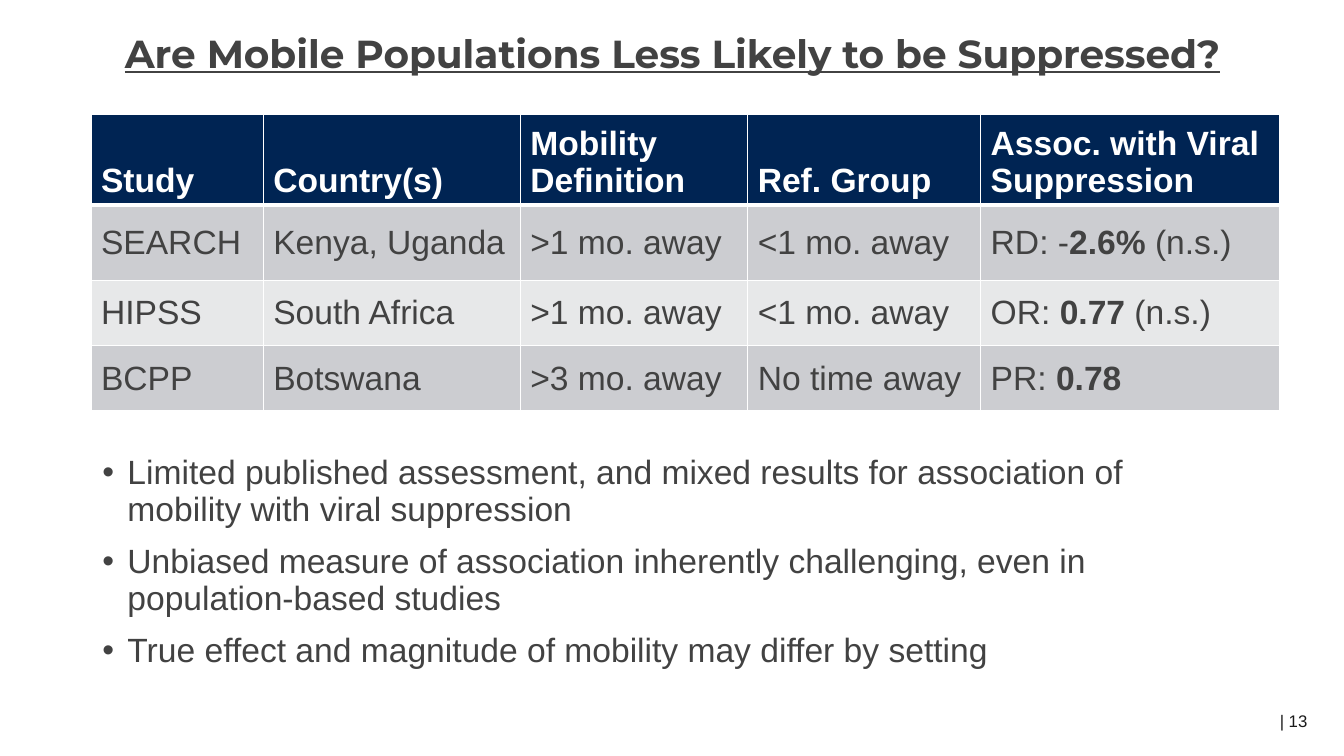
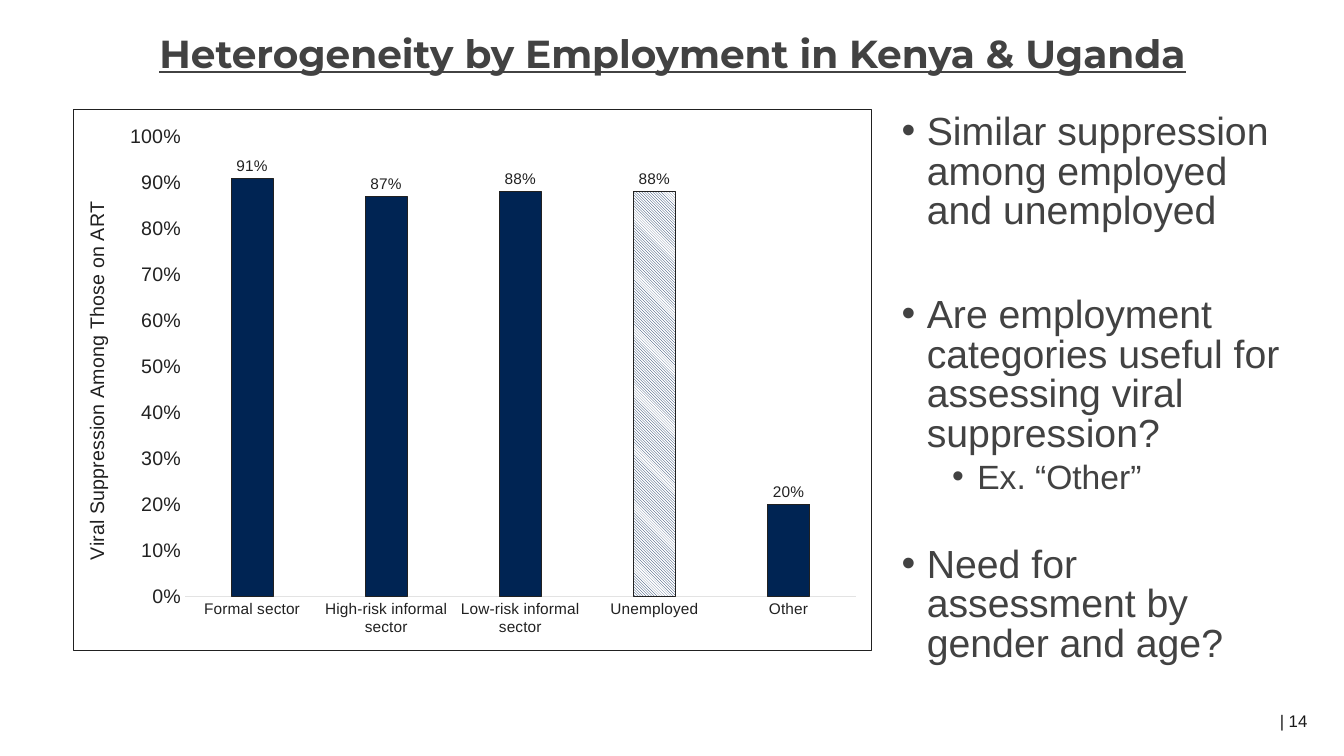
"""Build two slides on mobility, employment and viral suppression."""
from dataclasses import dataclass

import lxml.etree
import pptx
import pptx.chart.chart
import pptx.chart.data
import pptx.dml.color
import pptx.enum.chart
import pptx.enum.dml
import pptx.enum.text
import pptx.oxml
import pptx.oxml.ns
import pptx.presentation
import pptx.slide
import pptx.table
import pptx.text.text
import pptx.util

Pt = pptx.util.Pt
Align = pptx.enum.text.PP_ALIGN
Anchor = pptx.enum.text.MSO_ANCHOR
qn = pptx.oxml.ns.qn

COLOURS = {
    "text": "424242",
    "ink": "212121",
    "footer": "1A1A1A",
    "navy": "002453",
    "white": "FFFFFF",
    "band": "CCCDD1",
    "light_band": "E7E8E9",
    "axis": "E3E3E3",
}
BODY_FONT = "Arial"
TITLE_FONT = "Montserrat"


@dataclass(frozen=True)
class Frame:
    left: float
    top: float
    width: float
    height: float

    def lengths(self) -> list[pptx.util.Length]:
        return [Pt(side) for side in (self.left, self.top, self.width, self.height)]


@dataclass(frozen=True)
class Bullet:
    text: str
    size: float
    before: float = 0
    level: int = 0


TITLE_FRAME = Frame(52, 26.6, 857, 51)
NUMBER_FRAME = Frame(725, 500.4, 216, 28.8)
TABLE_FRAME = Frame(65, 81.4, 849, 208.4)
CHART_FRAME = Frame(52, 78, 571, 387)
FINDINGS_FRAME = Frame(66, 321, 828, 170)
QUESTIONS_FRAME = Frame(637, 78, 290, 422)

COLUMN_WIDTHS = (123, 183.6, 162.5, 166.4, 213.5)
ROW_HEIGHTS = (61, 54, 46.7, 46.7)
STUDIES = (
    ("Study", "Country(s)", "Mobility Definition", "Ref. Group", "Assoc. with Viral Suppression"),
    ("SEARCH", "Kenya, Uganda", ">1 mo. away", "<1 mo. away", "RD: -**2.6%** (n.s.)"),
    ("HIPSS", "South Africa", ">1 mo. away", "<1 mo. away", "OR: **0.77** (n.s.)"),
    ("BCPP", "Botswana", ">3 mo. away", "No time away", "PR: **0.78**"),
)
FINDINGS = (
    Bullet("Limited published assessment, and mixed results for association of "
           "mobility with viral suppression", 24),
    Bullet("Unbiased measure of association inherently challenging, even in "
           "population-based studies", 24, 10),
    Bullet("True effect and magnitude of mobility may differ by setting", 24, 10),
)
QUESTIONS = (
    Bullet("Similar suppression among employed and unemployed", 28),
    Bullet("Are employment categories useful for assessing viral suppression?", 28, 46),
    Bullet("Ex. “Other”", 24, 5, 1),
    Bullet("Need for assessment by gender and age?", 28, 36),
)
SUPPRESSION = {
    "Formal sector": 0.91,
    "High-risk informal sector": 0.87,
    "Low-risk informal sector": 0.88,
    "Unemployed": 0.88,
    "Other": 0.2,
}
UNEMPLOYED_INDEX = 3
PLOT_LAYOUT = {"x": 0.14, "y": 0.05, "w": 0.84, "h": 0.85}


def colour(name: str) -> pptx.dml.color.RGBColor:
    return pptx.dml.color.RGBColor.from_string(COLOURS[name])


def style_font(font: pptx.text.text.Font, size: float, tint: str, *, name: str = BODY_FONT,
               bold: bool = False, underline: bool = False) -> None:
    font.name, font.size, font.bold, font.underline = name, Pt(size), bold, underline
    font.color.rgb = colour(tint)


def write_text(frame: pptx.text.text.TextFrame, text: str, *, size: float, tint: str = "text",
               name: str = BODY_FONT, bold: bool = False, underline: bool = False,
               align: Align = Align.LEFT, spacing: float = 1.0, before: float = 0,
               bullet_level: int | None = None) -> None:
    para = frame.paragraphs[0]
    if para.runs:
        para = frame.add_paragraph()
    if bullet_level is not None:
        properties = para._p.get_or_add_pPr()
        properties.set("marL", str(Pt(18 + 36 * bullet_level)))
        properties.set("indent", str(-Pt(18)))
        lxml.etree.SubElement(properties, qn("a:buFont")).set("typeface", BODY_FONT)
        lxml.etree.SubElement(properties, qn("a:buChar")).set("char", "•")
        para.level = bullet_level
    para.alignment, para.line_spacing, para.space_before = align, spacing, Pt(before)
    for index, part in enumerate(text.split("**")):
        if part:
            span = para.add_run()
            span.text = part
            style_font(span.font, size, tint, name=name, bold=bold or index % 2 == 1,
                       underline=underline)


def add_box(page: pptx.slide.Slide, place: Frame,
            anchor: Anchor = Anchor.TOP) -> pptx.text.text.TextFrame:
    frame = page.shapes.add_textbox(*place.lengths()).text_frame
    frame.word_wrap = True
    frame.vertical_anchor = anchor
    return frame


def add_page(deck: pptx.presentation.Presentation, title: str, number: int) -> pptx.slide.Slide:
    page = deck.slides.add_slide(deck.slide_layouts[5])
    heading = page.shapes.title
    heading.left, heading.top, heading.width, heading.height = TITLE_FRAME.lengths()
    heading.text_frame.vertical_anchor = Anchor.TOP
    heading.text_frame.auto_size = pptx.enum.text.MSO_AUTO_SIZE.NONE
    write_text(heading.text_frame, title, size=27.9, name=TITLE_FONT, bold=True,
               underline=True, align=Align.CENTER, spacing=0.7)
    write_text(add_box(page, NUMBER_FRAME, Anchor.MIDDLE), f"| {number}", size=12,
               tint="footer", align=Align.RIGHT)
    return page


def add_bullets(page: pptx.slide.Slide, place: Frame, bullets: tuple[Bullet, ...],
                spacing: float) -> None:
    frame = add_box(page, place)
    for bullet in bullets:
        write_text(frame, bullet.text, size=bullet.size, before=bullet.before,
                   spacing=spacing, bullet_level=bullet.level)


def set_borders(cell: pptx.table._Cell, bottom: float) -> None:
    properties = cell._tc.get_or_add_tcPr()
    widths = {"lnL": 1, "lnR": 1, "lnT": 1, "lnB": bottom}
    for index, (side, width) in enumerate(widths.items()):
        line = lxml.etree.Element(qn(f"a:{side}"), w=str(Pt(width)))
        fill = lxml.etree.SubElement(line, qn("a:solidFill"))
        lxml.etree.SubElement(fill, qn("a:srgbClr")).set("val", COLOURS["white"])
        properties.insert(index, line)


def add_study_table(page: pptx.slide.Slide) -> None:
    table = page.shapes.add_table(len(STUDIES), len(COLUMN_WIDTHS),
                                  *TABLE_FRAME.lengths()).table
    for column, width in zip(table.columns, COLUMN_WIDTHS):
        column.width = Pt(width)
    for index, (row, height, texts) in enumerate(zip(table.rows, ROW_HEIGHTS, STUDIES)):
        header = index == 0
        row.height = Pt(height)
        band = "navy" if header else "band" if index % 2 else "light_band"
        for cell, text in zip(row.cells, texts):
            cell.fill.solid()
            cell.fill.fore_color.rgb = colour(band)
            cell.vertical_anchor = Anchor.BOTTOM if header else Anchor.MIDDLE
            set_borders(cell, 3 if header else 1)
            write_text(cell.text_frame, text, size=24, bold=header,
                       tint="white" if header else "text")


def frame_chart(chart: pptx.chart.chart.Chart) -> None:
    namespaces = pptx.oxml.ns.nsdecls("c", "a")
    chart.element.find(qn("c:chart")).addnext(pptx.oxml.parse_xml(
        f'<c:spPr {namespaces}><a:noFill/><a:ln w="{Pt(0.75)}"><a:solidFill>'
        f'<a:srgbClr val="{COLOURS["ink"]}"/></a:solidFill></a:ln></c:spPr>'))
    area = chart.element.find(f".//{qn('c:plotArea')}")
    for layout in area.findall(qn("c:layout")):
        area.remove(layout)
    modes = "".join(f'<c:{side}Mode val="edge"/>' for side in "xy")
    sides = "".join(f'<c:{side} val="{value}"/>' for side, value in PLOT_LAYOUT.items())
    area.insert(0, pptx.oxml.parse_xml(
        f'<c:layout {namespaces}><c:manualLayout><c:layoutTarget val="inner"/>'
        f'{modes}{sides}</c:manualLayout></c:layout>'))


def style_axes(chart: pptx.chart.chart.Chart) -> None:
    for axis, size in ((chart.category_axis, 11), (chart.value_axis, 14)):
        axis.has_major_gridlines = False
        axis.major_tick_mark = axis.minor_tick_mark = pptx.enum.chart.XL_TICK_MARK.NONE
        style_font(axis.tick_labels.font, size, "ink")
    chart.category_axis.format.line.color.rgb = colour("axis")
    chart.category_axis.format.line.width = Pt(0.75)
    values = chart.value_axis
    values.minimum_scale, values.maximum_scale, values.major_unit = 0, 1, 0.1
    values.format.line.fill.background()
    values.tick_labels.number_format = "0%"
    values.tick_labels.number_format_is_linked = False
    title = values.axis_title
    write_text(title.text_frame, "Viral Suppression Among Those on ART", size=14,
               tint="ink", align=Align.CENTER)
    title.element.find(f".//{qn('a:bodyPr')}").set("rot", "-5400000")


def add_employment_chart(page: pptx.slide.Slide) -> None:
    data = pptx.chart.data.CategoryChartData(number_format="0%")
    data.categories = list(SUPPRESSION)
    data.add_series("Series 1", list(SUPPRESSION.values()))
    chart = page.shapes.add_chart(pptx.enum.chart.XL_CHART_TYPE.COLUMN_CLUSTERED,
                                  *CHART_FRAME.lengths(), data).chart
    chart.has_title = chart.has_legend = False
    style_font(chart.font, 10, "text")
    frame_chart(chart)
    style_axes(chart)
    plot = chart.plots[0]
    plot.gap_width, plot.overlap, plot.vary_by_categories = 219, -27, False
    plot.has_data_labels = True
    labels = plot.data_labels
    labels.show_value, labels.number_format, labels.number_format_is_linked = True, "0%", False
    labels.position = pptx.enum.chart.XL_LABEL_POSITION.OUTSIDE_END
    style_font(labels.font, 11, "ink")
    series = plot.series[0]
    series.format.fill.solid()
    series.format.fill.fore_color.rgb = colour("navy")
    unemployed = series.points[UNEMPLOYED_INDEX]
    hatch = unemployed.format.fill
    hatch.patterned()
    hatch.pattern = pptx.enum.dml.MSO_PATTERN.DARK_DOWNWARD_DIAGONAL
    hatch.fore_color.rgb = colour("navy")
    hatch.back_color.rgb = colour("white")
    for bar in (series, unemployed):
        bar.format.line.color.rgb = colour("ink")
        bar.format.line.width = Pt(0.75)


def main() -> None:
    deck = pptx.Presentation()
    deck.slide_width, deck.slide_height = Pt(960), Pt(540)

    mobility = add_page(deck, "Are Mobile Populations Less Likely to be Suppressed?", 13)
    add_study_table(mobility)
    add_bullets(mobility, FINDINGS_FRAME, FINDINGS, 0.93)

    employment = add_page(deck, "Heterogeneity by Employment in Kenya & Uganda", 14)
    add_employment_chart(employment)
    add_bullets(employment, QUESTIONS_FRAME, QUESTIONS, 0.84)

    deck.save("out.pptx")


if __name__ == "__main__":
    main()
